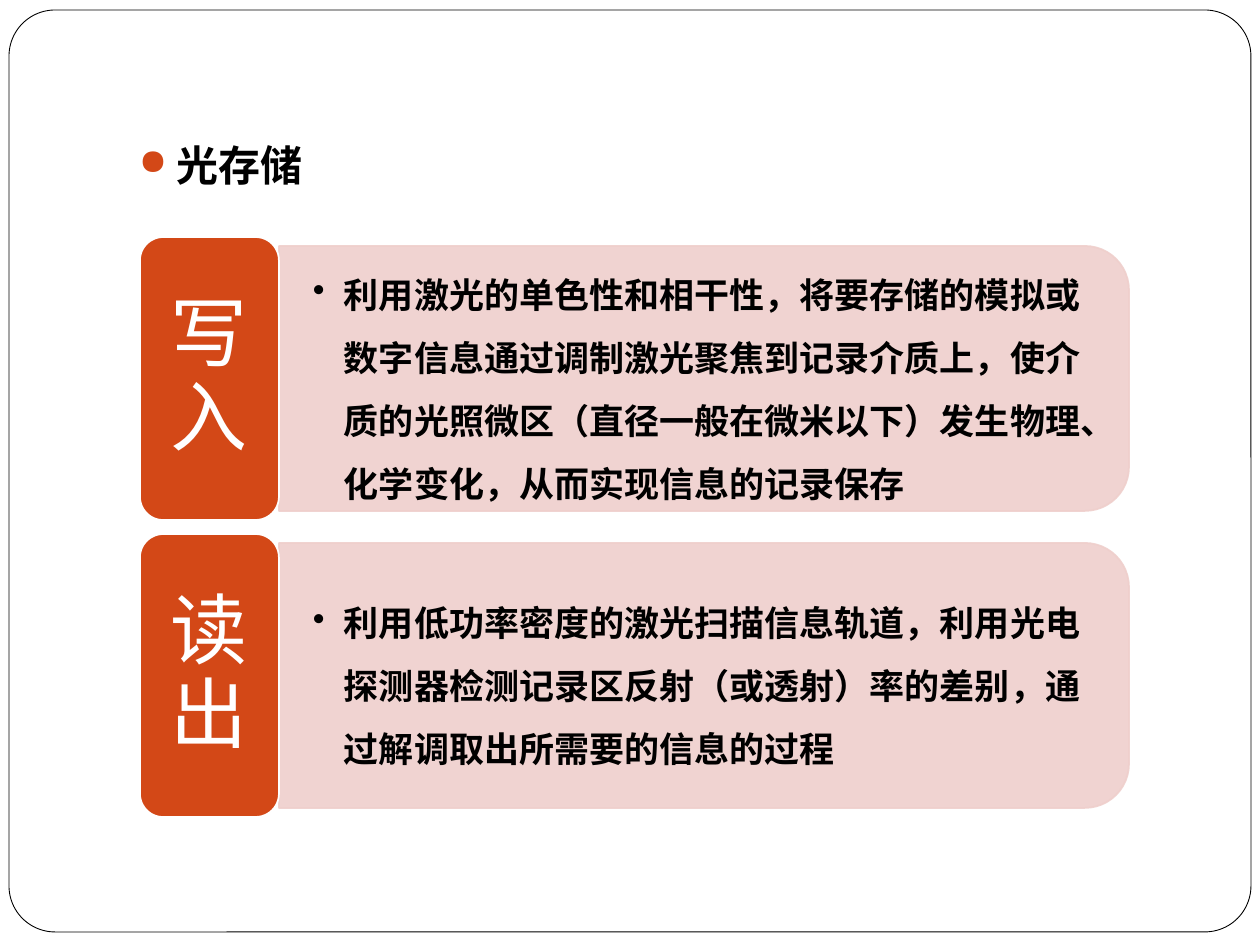
import pptx
import pptx.util
import pptx.dml.color
import pptx.enum.shapes
import pptx.enum.text
import pptx.oxml
import pptx.oxml.ns

RGB = pptx.dml.color.RGBColor
BLACK, WHITE = RGB(0, 0, 0), RGB(255, 255, 255)
ORANGE, PINK = RGB(0xD3, 0x48, 0x17), RGB(0xEF, 0xCF, 0xCC)
SHAPE = pptx.enum.shapes.MSO_SHAPE
ANCHOR = pptx.enum.text.MSO_ANCHOR
ALIGN = pptx.enum.text.PP_ALIGN
Pt = pptx.util.Pt
FONT = "Times New Roman"

# Content
HEADING = "光存储"
STEPS = [
    ("写入", "利用激光的单色性和相干性，将要存储的模拟或数字信息通过调制激光聚焦到记录介质上，"
     "使介质的光照微区（直径一般在微米以下）发生物理、化学变化，从而实现信息的记录保存"),
    ("读出", "利用低功率密度的激光扫描信息轨道，利用光电探测器检测记录区反射（或透射）率的差别，"
     "通过解调取出所需要的信息的过程"),
]

# Layout in px
PX_PER_INCH = 126
STEP_TOP, STEP_PITCH = 237, 297
LEFT, TAG_W, TAG_H = 140, 139, 283
PANEL_W, PANEL_H = 850, 265
TAG_PAD = 7

# Text formats
HEAD_FONT = {"size": Pt(24), "bold": True, "name": FONT}
BODY_FONT = {"size": Pt(20), "bold": True, "name": FONT}
TAG_FONT = {"size": Pt(44), "bold": False, "name": FONT}
HEAD_PARA = {"line_spacing": 1.5, "space_before": Pt(5.8)}
BODY_PARA = {"line_spacing": 1.5, "space_after": Pt(3)}
TAG_PARA = {"line_spacing": 0.9, "space_after": Pt(15), "alignment": ALIGN.CENTER}


def px(n):
    return round(n * pptx.util.Inches(1) / PX_PER_INCH)


def add_xml(parent, xml):
    ns = pptx.oxml.ns.nsdecls("a")
    parent.append(pptx.oxml.parse_xml(xml.replace("/>", f" {ns}/>", 1)))


def add_shape(slide, kind, box, fill, line, width):
    sp = slide.shapes.add_shape(kind, *map(px, box))
    sp.shadow.inherit = False
    sp.fill.solid()
    sp.fill.fore_color.rgb = fill
    sp.line.color.rgb = line
    sp.line.width = Pt(width)
    return sp


def add_text(slide, box, text, font, para, color, insets, anchor=ANCHOR.MIDDLE):
    tf = slide.shapes.add_textbox(*map(px, box)).text_frame
    side, end = map(px, insets)
    frame = {"word_wrap": True, "vertical_anchor": anchor, "margin_left": side,
             "margin_right": side, "margin_top": end, "margin_bottom": end}
    p = tf.paragraphs[0]
    r = p.add_run()
    r.text = text
    for obj, values in ((tf, frame), (p, para), (r.font, font)):
        for name, value in values.items():
            setattr(obj, name, value)
    r.font.color.rgb = color
    return p


def add_bullet(p, char, indent, *extras):
    pPr = p._p.get_or_add_pPr()
    pPr.set("marL", str(px(indent)))
    pPr.set("indent", str(-px(indent)))
    for xml in extras:
        add_xml(pPr, xml)
    add_xml(pPr, f'<a:buChar char="{char}"/>')


def add_step(slide, top, label, text):
    mid = top + TAG_H / 2
    panel_left = LEFT + TAG_W

    # Panel: a shape with two round corners, turned on its side
    panel = add_shape(slide, SHAPE.ROUND_2_SAME_RECTANGLE,
                      (panel_left + (PANEL_W - PANEL_H) / 2, mid - PANEL_W / 2,
                       PANEL_H, PANEL_W), PINK, PINK, 1)
    panel.rotation = 90
    for clr in panel._element.spPr.iter(pptx.oxml.ns.qn("a:srgbClr")):
        add_xml(clr, '<a:alpha val="90000"/>')
    p = add_text(slide, (panel_left, mid - 120, PANEL_W - 13, 240), text,
                 BODY_FONT, BODY_PARA, BLACK, (34, 18))
    add_bullet(p, "•", 31)

    # Tag with its label
    add_shape(slide, SHAPE.ROUNDED_RECTANGLE, (LEFT, top, TAG_W, TAG_H), ORANGE, WHITE, 1)
    add_text(slide, (LEFT + TAG_PAD, top + TAG_PAD, TAG_W - 2 * TAG_PAD, TAG_H - 2 * TAG_PAD),
             label, TAG_FONT, TAG_PARA, WHITE, (23, 11))


def main():
    prs = pptx.Presentation()
    prs.slide_width, prs.slide_height = px(1260), px(945)
    slide = prs.slides.add_slide(prs.slide_layouts[6])

    # Frame
    frame = add_shape(slide, SHAPE.ROUNDED_RECTANGLE, (9, 10, 1242, 922), WHITE, BLACK, 0.5)
    frame.adjustments[0] = 0.05

    # Heading
    p = add_text(slide, (126, 108, 1071, 816), HEADING, HEAD_FONT, HEAD_PARA, BLACK,
                 (13, 6), ANCHOR.TOP)
    add_bullet(p, "●", 38, f'<a:buClr/>'.replace("<a:buClr/>", '<a:buSzPct val="85000"/>'))
    clr = pptx.oxml.parse_xml(f'<a:buClr {pptx.oxml.ns.nsdecls("a")}>'
                              f'<a:srgbClr val="{ORANGE}"/></a:buClr>')
    p._p.pPr.find(pptx.oxml.ns.qn("a:buSzPct")).addprevious(clr)

    # Steps
    for i, (label, text) in enumerate(STEPS):
        add_step(slide, STEP_TOP + i * STEP_PITCH, label, text)

    prs.save("out.pptx")


if __name__ == "__main__":
    main()
